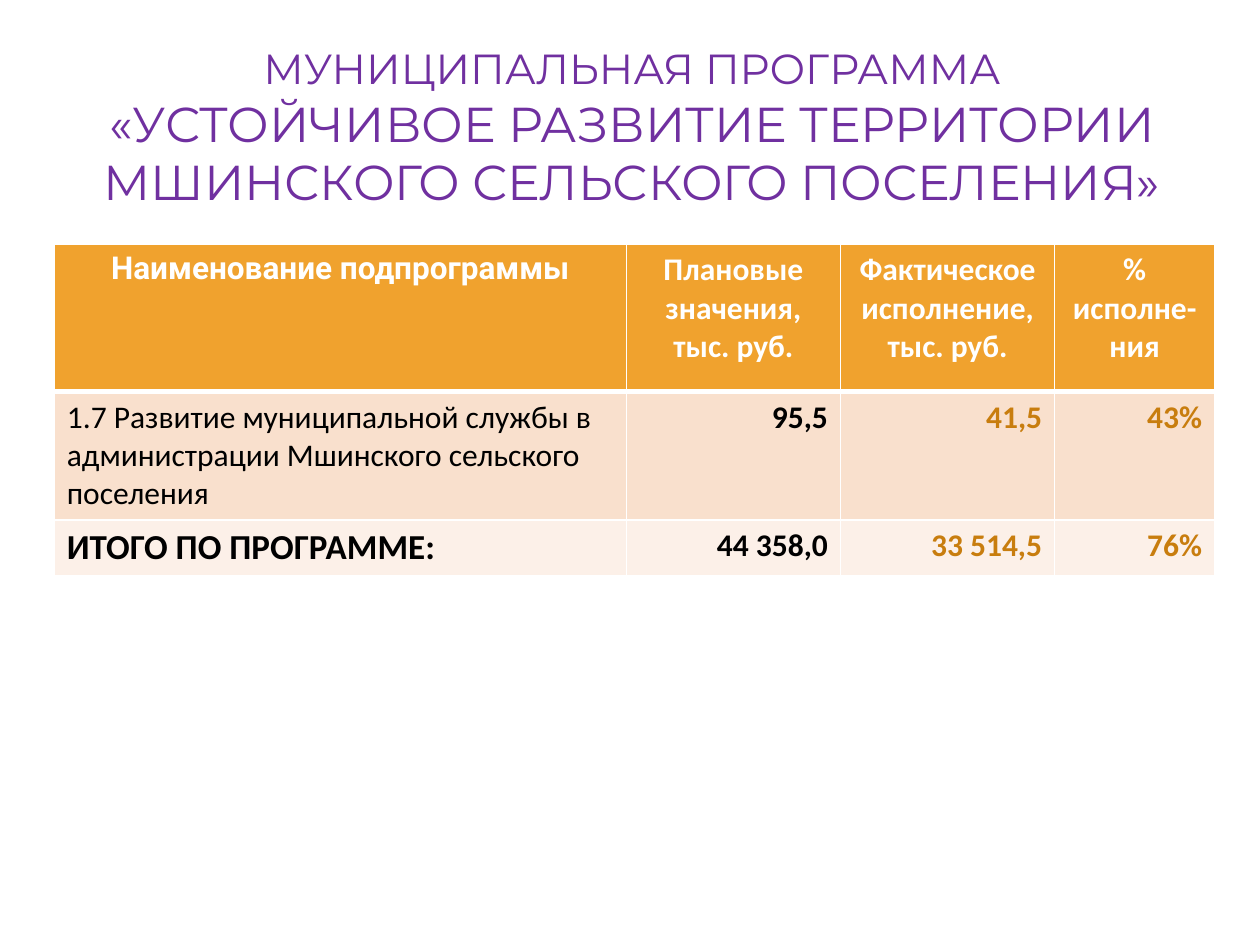
from dataclasses import dataclass

from lxml.etree import SubElement
from pptx import Presentation
from pptx.dml.color import RGBColor
from pptx.enum.text import MSO_ANCHOR, PP_ALIGN
from pptx.oxml.ns import qn
from pptx.util import Pt


@dataclass(frozen=True)
class Theme:
    title: str = "7030A0"
    header: str = "F0A22E"
    band: str = "F9E0CD"
    total: str = "FCF0E8"
    accent: str = "C87D0E"
    white: str = "FFFFFF"
    black: str = "000000"
    title_font: str = "Montserrat"
    header_font: str = "Roboto"
    body_font: str = "Calibri"
    title_small: int = 24
    title_large: int = 28
    body_size: int = 18
    total_size: int = 20
    thin_line: int = 1
    thick_line: int = 3


THEME = Theme()
COLUMN_WIDTHS = [326.9, 122.4, 122.4, 91.4]
ROW_HEIGHTS = [84.2, 72, 31]
ROW_FILLS = [THEME.header, THEME.band, THEME.total]
ROWS = [
    ["Наименование подпрограммы", "Плановые значения, тыс. руб.",
     "Фактическое исполнение, тыс. руб.", "% исполне-ния"],
    ["1.7 Развитие муниципальной службы в администрации Мшинского сельского поселения",
     "95,5", "41,5", "43%"],
    ["ИТОГО ПО ПРОГРАММЕ:", "44 358,0", "33 514,5", "76%"],
]


def style_span(span, font, size, color, bold=False):
    span.font.name = font
    span.font.size = Pt(size)
    span.font.bold = bold
    span.font.color.rgb = RGBColor.from_string(color)


def set_borders(cell, widths):
    properties = cell._tc.get_or_add_tcPr()
    for position, (side, width) in enumerate(widths.items()):
        line = properties.makeelement(qn(f"a:{side}"), {"w": str(Pt(width))})
        fill = SubElement(line, qn("a:solidFill"))
        SubElement(fill, qn("a:srgbClr"), val=THEME.white)
        properties.insert(position, line)


def add_title(page, left, top, width, height):
    box = page.shapes.add_textbox(Pt(left), Pt(top), Pt(width), Pt(height))
    frame = box.text_frame
    frame.word_wrap = True
    frame.vertical_anchor = MSO_ANCHOR.TOP
    para = frame.paragraphs[0]
    para.text = ("МУНИЦИПАЛЬНАЯ ПРОГРАММА\v"
                 "«УСТОЙЧИВОЕ РАЗВИТИЕ ТЕРРИТОРИИ МШИНСКОГО СЕЛЬСКОГО ПОСЕЛЕНИЯ»")
    para.alignment = PP_ALIGN.CENTER
    for span, size in zip(para.runs, [THEME.title_small, THEME.title_large]):
        style_span(span, THEME.title_font, size, THEME.title)


def fill_cell(cell, text, row, column):
    is_header, is_label = row == 0, column == 0
    is_total = row == len(ROWS) - 1
    cell.fill.solid()
    cell.fill.fore_color.rgb = RGBColor.from_string(ROW_FILLS[row])
    set_borders(cell, {
        "lnL": THEME.thin_line,
        "lnR": THEME.thin_line,
        "lnT": THEME.thick_line if row == 1 else THEME.thin_line,
        "lnB": THEME.thick_line if is_header else THEME.thin_line,
    })
    para = cell.text_frame.paragraphs[0]
    para.text = text
    if is_header:
        para.alignment, color = PP_ALIGN.CENTER, THEME.white
    else:
        para.alignment = PP_ALIGN.LEFT if is_label else PP_ALIGN.RIGHT
        color = THEME.black if column < 2 else THEME.accent
    font = THEME.header_font if is_header and is_label else THEME.body_font
    size = THEME.total_size if is_total and is_label else THEME.body_size
    bold = is_header or is_total or not is_label
    style_span(para.runs[0], font, size, color, bold)


def add_budget_table(page, left, top):
    table = page.shapes.add_table(
        len(ROWS), len(COLUMN_WIDTHS), Pt(left), Pt(top),
        Pt(sum(COLUMN_WIDTHS)), Pt(sum(ROW_HEIGHTS))).table
    for column, width in zip(table.columns, COLUMN_WIDTHS):
        column.width = Pt(width)
    for row, height in zip(table.rows, ROW_HEIGHTS):
        row.height = Pt(height)
    for row, texts in enumerate(ROWS):
        for column, text in enumerate(texts):
            fill_cell(table.cell(row, column), text, row, column)


def main():
    deck = Presentation()
    deck.slide_width, deck.slide_height = Pt(720), Pt(540)
    page = deck.slides.add_slide(deck.slide_layouts[6])
    add_budget_table(page, 31, 139.7)
    add_title(page, 25.2, 20.9, 671.8, 93.6)
    deck.save("out.pptx")


if __name__ == "__main__":
    main()
